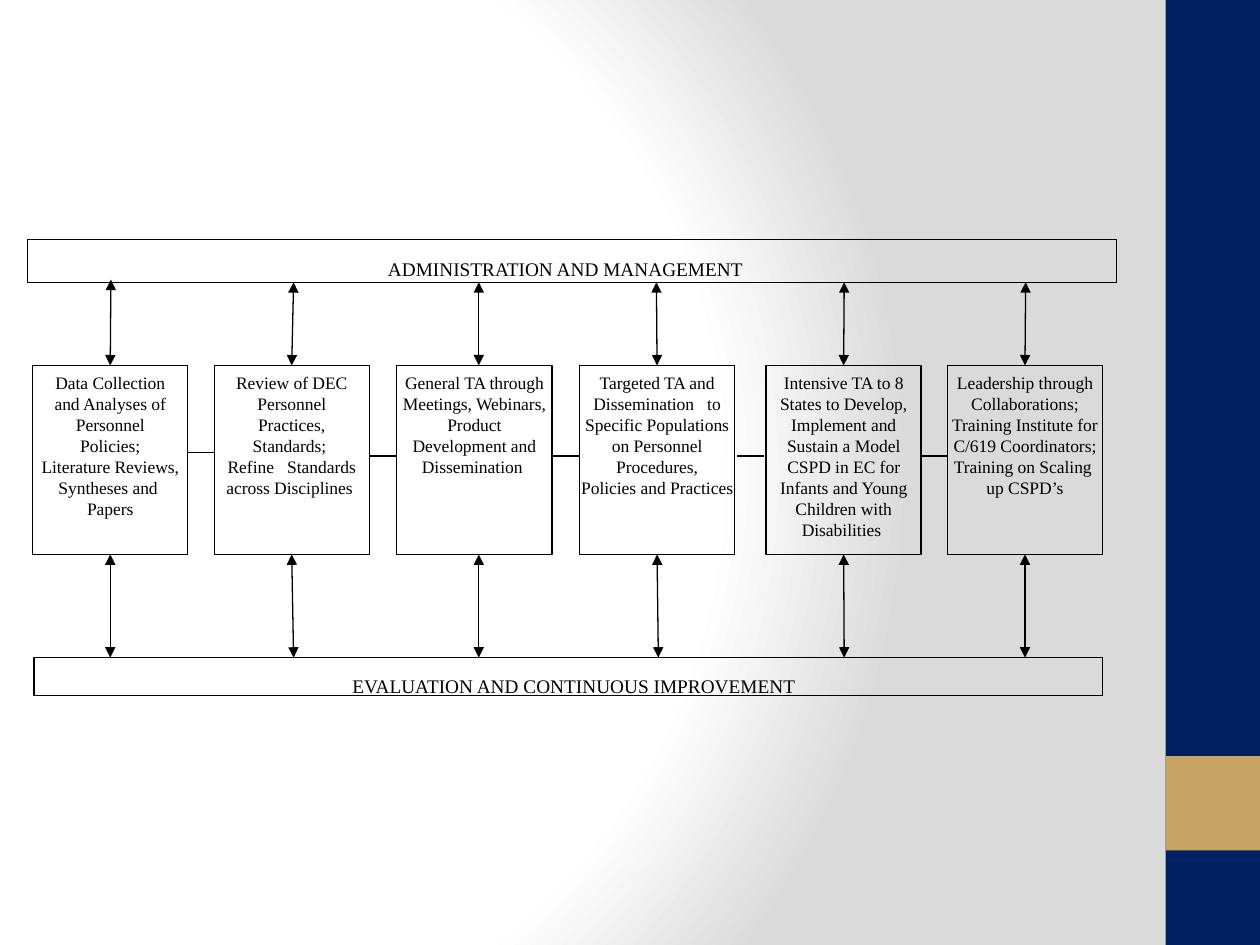
from lxml.etree import SubElement
from pptx import Presentation
from pptx.dml.color import RGBColor
from pptx.enum.shapes import MSO_CONNECTOR, MSO_SHAPE
from pptx.enum.text import MSO_ANCHOR, PP_ALIGN
from pptx.oxml.ns import qn
from pptx.util import Pt

COLORS = {"ink": "000000", "navy": "002060", "gold": "C8A464", "white": "FFFFFF", "grey": "DADADA"}
FONT = "Times New Roman"
BOX_TOP, BOX_WIDTH, BOX_HEIGHT = 208.8, 88.6, 108
BOX_BOTTOM = BOX_TOP + BOX_HEIGHT
ADMIN_BOTTOM, EVALUATION_TOP = 161.3, 375.8

deck = Presentation()
deck.slide_width, deck.slide_height = Pt(720), Pt(540)
page = deck.slides.add_slide(deck.slide_layouts[6])


def add_rectangle(left, top, width, height, fill=None):
    shape = page.shapes.add_shape(MSO_SHAPE.RECTANGLE, Pt(left), Pt(top), Pt(width), Pt(height))
    shape.shadow.inherit = False
    if fill:
        shape.fill.solid()
        shape.fill.fore_color.rgb = RGBColor.from_string(COLORS[fill])
        shape.line.fill.background()
    else:
        shape.fill.background()
        shape.line.color.rgb = RGBColor.from_string(COLORS["ink"])
        shape.line.width = Pt(0.75)
    return shape


def add_line(start_x, start_y, end_x, end_y, arrows=False):
    line = page.shapes.add_connector(
        MSO_CONNECTOR.STRAIGHT, Pt(start_x), Pt(start_y), Pt(end_x), Pt(end_y))
    line.line.color.rgb = RGBColor.from_string(COLORS["ink"])
    line.line.width = Pt(0.75)
    if arrows:
        outline = line.line._get_or_add_ln()
        for end in ("a:headEnd", "a:tailEnd"):
            SubElement(outline, qn(end), type="triangle")
    SubElement(line._element.spPr, qn("a:effectLst"))
    return line


page.background.fill.gradient()
gradient = page.element.find(".//" + qn("a:gradFill"))
for child in list(gradient):
    gradient.remove(child)
stops = SubElement(gradient, qn("a:gsLst"))
for position, color in ((0, "white"), (75000, "white"), (100000, "grey")):
    stop = SubElement(stops, qn("a:gs"), pos=str(position))
    SubElement(stop, qn("a:srgbClr"), val=COLORS[color])
radial = SubElement(gradient, qn("a:path"), path="circle")
SubElement(radial, qn("a:fillToRect"), l="20000", t="50000", r="100000", b="50000")

add_rectangle(666, 0, 54, 540, "navy")
add_rectangle(666, 432, 54, 54, "gold")
add_rectangle(15.8, 136.8, 622.1, 24.5)
add_rectangle(19.4, EVALUATION_TOP, 610.6, 21.6)

activities = [
    (18.7, 63, 63.4, 159.8, 4.7, [
        "Data Collection and Analyses of Personnel", "Policies;",
        "Literature Reviews,", "Syntheses and  Papers"]),
    (122.4, 167.8, 167.8, ADMIN_BOTTOM, 4.7, [
        "Review of DEC Personnel Practices, Standards; ",
        "Refine   Standards across Disciplines "]),
    (226.8, 273.6, 273.6, ADMIN_BOTTOM, 1.8, [
        "General TA through Meetings, Webinars, Product Development and Dissemination "]),
    (331.2, 376.2, 375.1, ADMIN_BOTTOM, 0.5, [
        "Targeted TA and Dissemination   to Specific Populations on Personnel Procedures,",
        "Policies and Practices"]),
    (437.8, 482.4, 482.4, ADMIN_BOTTOM, 0.4, [
        "Intensive TA to 8 States to Develop, Implement and Sustain a Model CSPD in EC "
        "for Infants and Young Children with", "Disabilities "]),
    (541.4, 585.7, 586.1, ADMIN_BOTTOM, 0, [
        "Leadership through", "Collaborations;",
        "Training Institute for C/619 Coordinators;",
        "Training on Scaling ", "up CSPD’s"]),
]

for left, arrow_x, top_x, top_y, inset, texts in activities:
    box = add_rectangle(left, BOX_TOP, BOX_WIDTH, BOX_HEIGHT)
    frame = box.text_frame
    frame.word_wrap = True
    frame.vertical_anchor = MSO_ANCHOR.TOP
    frame.margin_left = frame.margin_right = Pt(inset)
    frame.margin_top = frame.margin_bottom = Pt(3.6)
    for index, text in enumerate(texts):
        para = frame.paragraphs[0] if index == 0 else frame.add_paragraph()
        para.text = text
        para.alignment = PP_ALIGN.CENTER
        para.font.name = FONT
        para.font.size = Pt(10)
        para.font.color.rgb = RGBColor.from_string(COLORS["ink"])
    upper = add_line(top_x, top_y, arrow_x, BOX_TOP, arrows=True)
    lower = add_line(arrow_x, BOX_BOTTOM, arrow_x, EVALUATION_TOP, arrows=True)
    if abs(arrow_x - left - BOX_WIDTH / 2) < 1.5:
        upper.end_connect(box, 0)
        lower.begin_connect(box, 2)

for start_x, y in ((106.9, 258.5), (211, 260.6), (315.4, 260.6), (421.2, 260.6), (526.3, 260.6)):
    add_line(start_x, y, start_x + 15.3, y)

for text, left, top, width, alignment in (
    ("ADMINISTRATION AND MANAGEMENT", 149, 143.7, 348.5, PP_ALIGN.CENTER),
    ("EVALUATION AND CONTINUOUS IMPROVEMENT", 194.3, 382, 381.7, PP_ALIGN.LEFT),
):
    label = page.shapes.add_textbox(Pt(left), Pt(top), Pt(width), Pt(22))
    label.text_frame.word_wrap = True
    para = label.text_frame.paragraphs[0]
    para.text = text
    para.alignment = alignment
    para.font.name = FONT
    para.font.size = Pt(11)
    para.font.color.rgb = RGBColor.from_string(COLORS["ink"])

deck.save("out.pptx")
